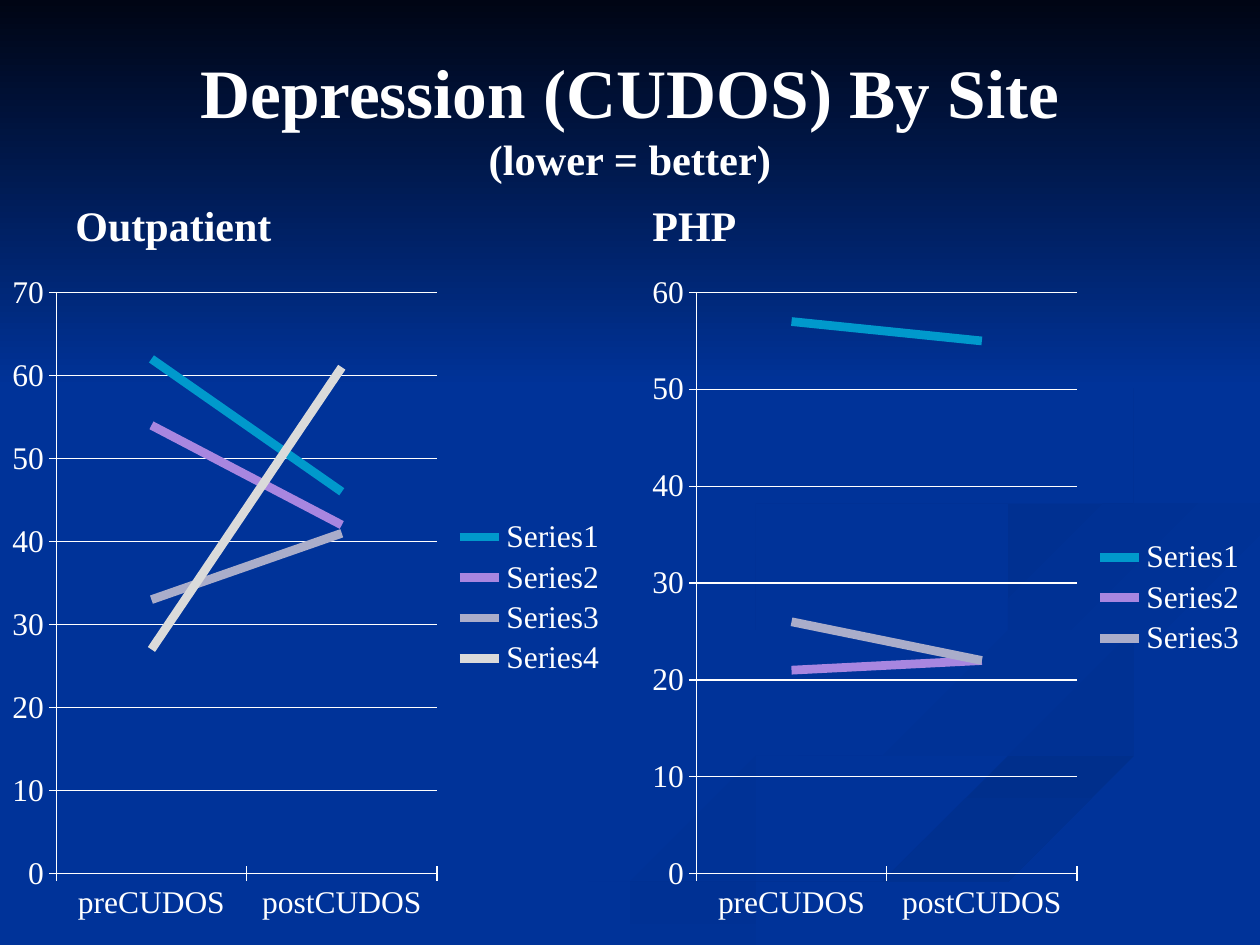
import pptx
import pptx.chart.data
import pptx.dml.color
import pptx.enum.chart
import pptx.enum.shapes
import pptx.enum.text
import pptx.util

Inches = pptx.util.Inches
Pt = pptx.util.Pt
FONT = "Times New Roman"
WHITE = "FFFFFF"
BLUE = "003399"
LINES = ["0099CC", "A886E0", "AAADCA", "DADADA"]
CATS = ["preCUDOS", "postCUDOS"]

RIBBONS = [
    ([BLUE, "003193"], 0, [
        (7.8, 5.53), (6.4, 5.07), (5.75, 4.6), (6.1, 4.99), (7.4, 5.39),
        (7.85, 5.7), (7, 6.09), (5, 6.61), (3, 7.49), (3.6, 7.49),
        (5.3, 6.74), (7.2, 6.23), (8, 5.81)]),
    ([BLUE, "003193"], 45, [
        (9.43, 5.7), (8.9, 5.35), (7.6, 4.98), (7.24, 4.64), (7.66, 5.12),
        (8.8, 5.49), (9.18, 5.81), (8.94, 6.05)]),
    (["002F8C", BLUE], 90, [
        (5.03, 7.49), (5.7, 7.49), (7.2, 6.82), (9.98, 6.09), (9.98, 5.81),
        (8, 6.38), (6, 7.06)]),
    (["003091", BLUE], 45, [
        (7.81, 4.6), (8.26, 4.96), (8.05, 4.72), (8.6, 4.43), (9.98, 4.2),
        (9.98, 4.02), (8.5, 4.27)]),
    (["002F8E", BLUE], 45, [
        (6.83, 4.3), (8.25, 4.02), (8.94, 3.44), (8.4, 2.75), (7.62, 2.33),
        (8.6, 2.92), (8.86, 3.48), (8.2, 3.86), (6.5, 4.2), (5.77, 4.62),
        (6.22, 5), (5.94, 4.65)]),
]

SITES = [
    (0, 0.5, "Outpatient", [(62, 46), (54, 42), (33, 41), (27, 61)], 70),
    (5.08, 5.08, "PHP", [(57, 55), (21, 22), (26, 22)], 60),
]


def tint(code):
    return pptx.dml.color.RGBColor.from_string(code)


def blend(a, b, c, d, t):
    bend = (2 * a - 5 * b + 4 * c - d) * t ** 2 + (3 * b - a - 3 * c + d) * t ** 3
    return b + ((c - a) * t + bend) / 2


def curve(points, steps=6):
    count = len(points)
    result = []
    for index in range(count):
        near = [points[(index + shift) % count] for shift in (-1, 0, 1, 2)]
        for step in range(steps):
            x, y = (blend(*axis, step / steps) for axis in zip(*near))
            result.append((min(x, 10), min(y, 7.5)))
    return result


class Deck:
    """Holds the current slide and draws styled elements on it."""

    def __init__(self, slide):
        self.slide = slide
        back = slide.background.fill
        back.solid()
        back.fore_color.rgb = tint(BLUE)

    def style(self, font, size):
        font.name = FONT
        font.size = Pt(size)
        font.color.rgb = tint(WHITE)

    def shade(self, form, hues, angle):
        form.shadow.inherit = False
        form.line.fill.background()
        form.fill.gradient()
        form.fill.gradient_angle = -angle % 360
        for stop, hue in zip(form.fill.gradient_stops, hues):
            stop.color.rgb = tint(hue)

    def ribbon(self, hues, angle, points):
        first, *rest = curve(points)
        pen = self.slide.shapes.build_freeform(*first, scale=Inches(1))
        pen.add_line_segments(rest, close=True)
        self.shade(pen.convert_to_shape(), hues, angle)

    def block(self, box, hues, angle):
        kind = pptx.enum.shapes.MSO_SHAPE.RECTANGLE
        form = self.slide.shapes.add_shape(kind, *map(Inches, box))
        self.shade(form, hues, angle)

    def text(self, box, runs, anchor, align):
        frame = self.slide.shapes.add_textbox(*map(Inches, box)).text_frame
        frame.word_wrap = True
        frame.vertical_anchor = anchor
        para = frame.paragraphs[0]
        para.alignment = align
        for index, (words, size) in enumerate(runs):
            if index:
                para.add_line_break()
            run = para.add_run()
            run.text = words
            run.font.bold = True
            self.style(run.font, size)

    def chart(self, box, rows, top):
        data = pptx.chart.data.CategoryChartData()
        data.categories = CATS
        for index, row in enumerate(rows, 1):
            data.add_series(f"Series{index}", row)
        kind = pptx.enum.chart.XL_CHART_TYPE.LINE
        chart = self.slide.shapes.add_chart(kind, *map(Inches, box), data).chart
        self.style(chart.font, 18)
        chart.has_title = False
        chart.has_legend = True
        chart.legend.position = pptx.enum.chart.XL_LEGEND_POSITION.RIGHT
        chart.legend.include_in_layout = False
        chart.plots[0].vary_by_categories = False
        for line, hue in zip(chart.plots[0].series, LINES):
            line.smooth = False
            line.format.line.width = Pt(5)
            line.format.line.color.rgb = tint(hue)
        value = chart.value_axis
        value.minimum_scale, value.maximum_scale, value.major_unit = 0, top, 10
        value.has_major_gridlines = True
        for axis in (value, chart.category_axis):
            axis.major_tick_mark = pptx.enum.chart.XL_TICK_MARK.CROSS
        for part in (value, chart.category_axis, value.major_gridlines):
            part.format.line.width = Pt(0.75)
            part.format.line.color.rgb = tint(WHITE)


def main():
    show = pptx.Presentation()
    show.slide_width, show.slide_height = Inches(10), Inches(7.5)
    deck = Deck(show.slides.add_slide(show.slide_layouts[6]))
    anchor = pptx.enum.text.MSO_ANCHOR
    align = pptx.enum.text.PP_ALIGN
    for ribbon in RIBBONS:
        deck.ribbon(*ribbon)
    deck.block((0, 0, 10, 3.08), ["000514", BLUE], 90)
    title = [("Depression (CUDOS) By Site", 39.6), ("(lower = better)", 24.3)]
    deck.text((0.5, 0.3, 9, 1.25), title, anchor.MIDDLE, align.CENTER)
    for left, inset, name, rows, top in SITES:
        deck.text((inset, 1.5, 4.42, 0.53), [(name, 24)], anchor.BOTTOM, align.LEFT)
        deck.chart((left, 2.08, 4.92, 5.33), rows, top)
    show.save("out.pptx")


if __name__ == "__main__":
    main()
